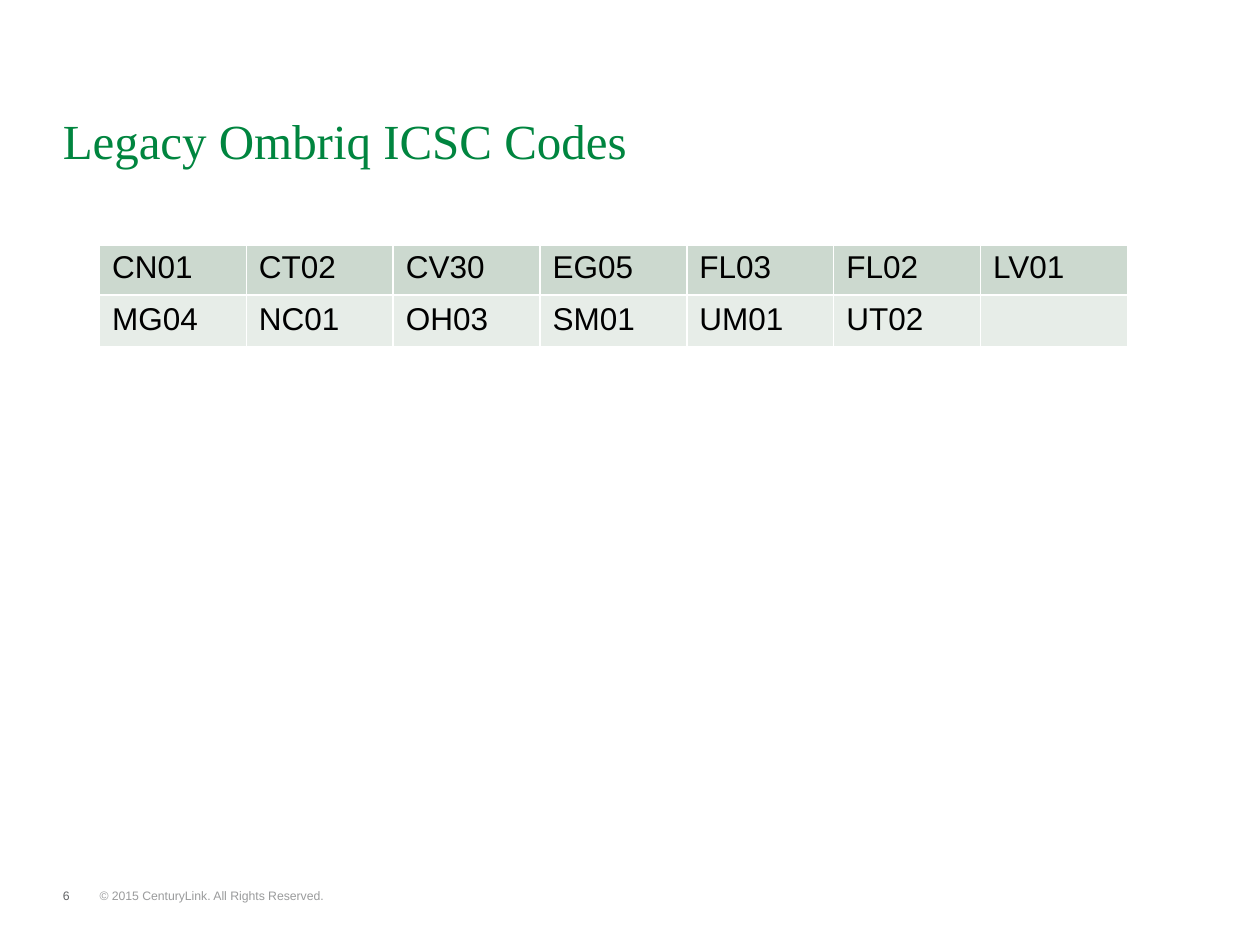
from lxml.etree import SubElement
from pptx import Presentation
from pptx.dml.color import RGBColor
from pptx.enum.text import MSO_ANCHOR
from pptx.oxml.ns import qn
from pptx.util import Inches, Pt


def add_text(page, text, left, top, width, height, size, font, color):
    box = page.shapes.add_textbox(Inches(left), Inches(top), Inches(width), Inches(height))
    box.text_frame.word_wrap = True
    paragraph = box.text_frame.paragraphs[0]
    paragraph.text = text
    paragraph.font.size = Pt(size)
    paragraph.font.name = font
    paragraph.font.color.rgb = RGBColor.from_string(color)
    return box.text_frame


def set_border(cell, side, points):
    """Draw a white line on one side (lnL, lnR, lnT, lnB); call before filling the cell."""
    line = SubElement(cell._tc.get_or_add_tcPr(), qn(f"a:{side}"), w=str(Pt(points)))
    SubElement(SubElement(line, qn("a:solidFill")), qn("a:srgbClr"), val="FFFFFF")


deck = Presentation()
deck.slide_width, deck.slide_height = Inches(10), Inches(7.5)
page = deck.slides.add_slide(deck.slide_layouts[6])

footer = add_text(page, "© 2015 CenturyLink. All Rights Reserved.",
                  0.79, 7, 3.26, 0.22, 7, "Arial", "9A9B9C")
footer.margin_left = 0

title = add_text(page, "Legacy Ombriq ICSC Codes",
                 0.4, 0.88, 9.2, 0.53, 28, "Times New Roman", "00853F")
title.paragraphs[0].line_spacing = 0.9

number = add_text(page, "6", 0.4, 7, 0.39, 0.22, 7, "Arial", "616365")
number.vertical_anchor = MSO_ANCHOR.MIDDLE

# The header row is empty and unfilled.
code_rows = [
    ([""] * 7, None),
    (["CN01", "CT02", "CV30", "EG05", "FL03", "FL02", "LV01"], "CCD9CF"),
    (["MG04", "NC01", "OH03", "SM01", "UM01", "UT02", ""], "E7EDE8"),
]
table = page.shapes.add_table(3, 7, Inches(0.79), Inches(1.53),
                              Inches(8.16), Inches(1.22)).table
for row_index, (codes, fill) in enumerate(code_rows):
    for column_index, code in enumerate(codes):
        cell = table.cell(row_index, column_index)
        for side in ("lnL", "lnR", "lnT", "lnB"):
            under_header = (row_index, side) in ((0, "lnB"), (1, "lnT"))
            set_border(cell, side, 3 if under_header else 1)
        if fill:
            cell.fill.solid()
            cell.fill.fore_color.rgb = RGBColor.from_string(fill)
        else:
            cell.fill.background()
        paragraph = cell.text_frame.paragraphs[0]
        paragraph.text = code
        paragraph.font.size = Pt(18)
        paragraph.font.name = "Arial"
        paragraph.font.bold = False
        paragraph.font.color.rgb = RGBColor.from_string("000000")

deck.save("out.pptx")
